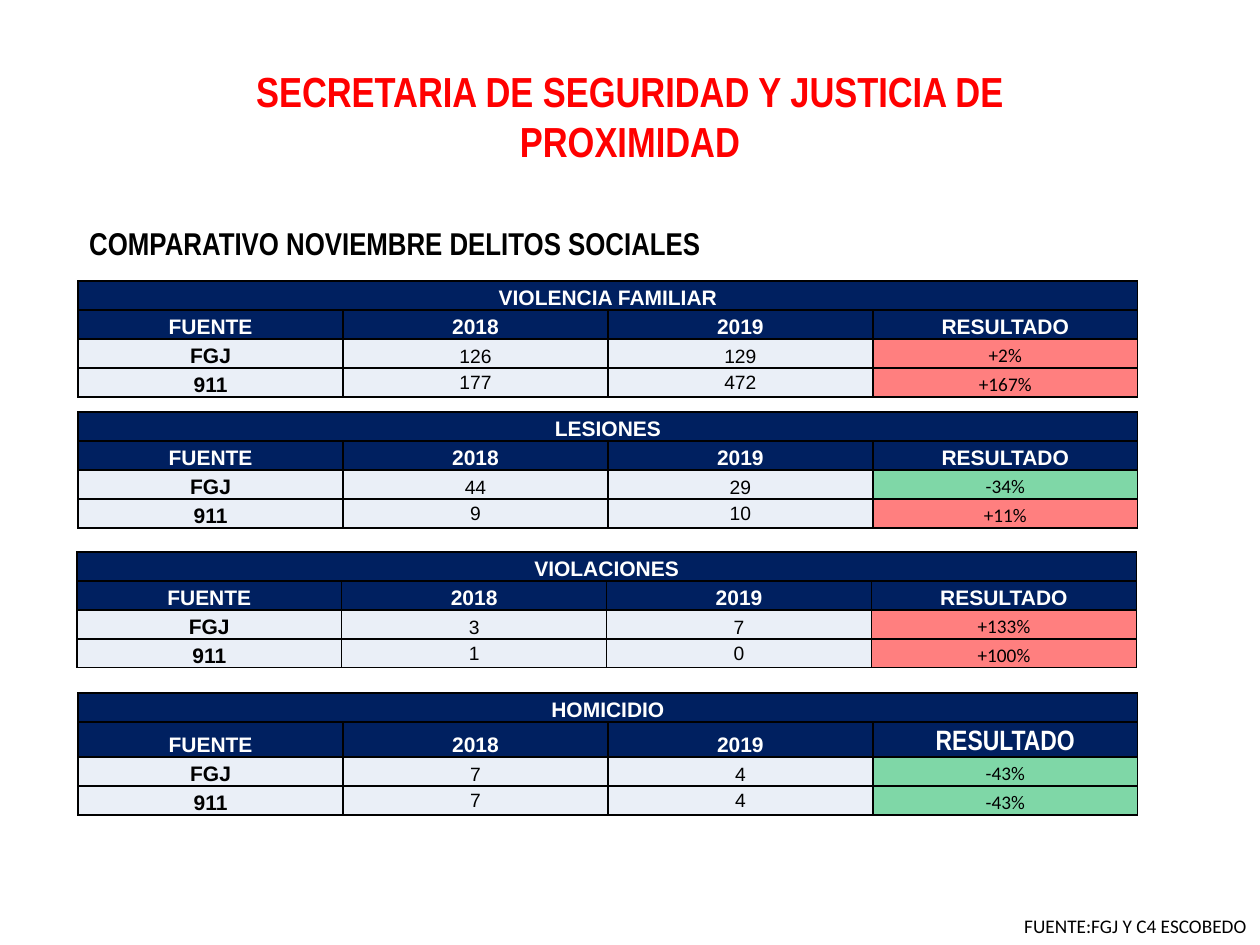
"""Build the slide comparing November social offences by source and year."""
from dataclasses import dataclass

import pptx
import pptx.dml.color
import pptx.enum.text
import pptx.oxml
import pptx.oxml.ns
import pptx.util

Inches = pptx.util.Inches
Pt = pptx.util.Pt
ALIGN = pptx.enum.text.PP_ALIGN
ANCHOR = pptx.enum.text.MSO_ANCHOR

COLORS = {
    "navy": "002060",
    "pale": "EAEFF7",
    "red": "FF0000",
    "green": "00B050",
    "white": "FFFFFF",
    "black": "000000",
}
HEADERS = ("FUENTE", "2018", "2019", "RESULTADO")
TABLE_WIDTH = 8.41
ROW_HEIGHT = 0.23


@dataclass(frozen=True)
class Style:
    size: float
    font: str
    color: str = "black"
    bold: bool = False


@dataclass(frozen=True)
class Result:
    source: str
    before: str
    after: str
    change: str
    color: str


@dataclass(frozen=True)
class Offence:
    name: str
    left: float
    top: float
    results: tuple[Result, ...]
    result_style: Style


HEAD = Style(12, "Arial", "white", True)
BIG_HEAD = Style(16, "Arial Narrow", "white", True)
SOURCE = Style(12, "Arial", bold=True)
COUNT = Style(11, "Arial")
CHANGE = Style(11, "Calibri")

OFFENCES = (
    Offence("VIOLENCIA FAMILIAR", 0.62, 2.23, (
        Result("FGJ", "126", "129", "+2%", "red"),
        Result("911", "177", "472", "+167%", "red")), HEAD),
    Offence("LESIONES", 0.62, 3.27, (
        Result("FGJ", "44", "29", "-34%", "green"),
        Result("911", "9", "10", "+11%", "red")), HEAD),
    Offence("VIOLACIONES", 0.61, 4.38, (
        Result("FGJ", "3", "7", "+133%", "red"),
        Result("911", "1", "0", "+100%", "red")), HEAD),
    Offence("HOMICIDIO", 0.62, 5.5, (
        Result("FGJ", "7", "4", "-43%", "green"),
        Result("911", "7", "4", "-43%", "green")), BIG_HEAD),
)


def rgb(name: str) -> pptx.dml.color.RGBColor:
    """Return the named colour."""
    return pptx.dml.color.RGBColor.from_string(COLORS[name])


def add_run(p, text: str, style: Style) -> None:
    """Add one styled run to a paragraph."""
    r = p.add_run()
    r.text = text
    r.font.size = Pt(style.size)
    r.font.name = style.font
    r.font.bold = style.bold
    r.font.color.rgb = rgb(style.color)


def add_text(s, box: tuple[float, ...], text: str, style: Style,
             align=ALIGN.LEFT, wrap: bool = True) -> None:
    """Add a text box holding one paragraph."""
    tf = s.shapes.add_textbox(*map(Inches, box)).text_frame
    tf.word_wrap = wrap
    tf.auto_size = pptx.enum.text.MSO_AUTO_SIZE.SHAPE_TO_FIT_TEXT
    p = tf.paragraphs[0]
    p.alignment = align
    add_run(p, text, style)


def format_cell(cell, fill: str, alpha: int = 100) -> None:
    """Give a cell its margins, black borders and fill."""
    cell.margin_left = cell.margin_right = cell.margin_top = Inches(0.01)
    cell.margin_bottom = 0
    tc_pr = cell._tc.get_or_add_tcPr()
    for side in "LRTB":
        tc_pr.append(pptx.oxml.parse_xml(
            f'<a:ln{side} {pptx.oxml.ns.nsdecls("a")} w="{Pt(1)}"><a:solidFill>'
            f'<a:srgbClr val="{COLORS["black"]}"/></a:solidFill></a:ln{side}>'))
    cell.fill.solid()
    cell.fill.fore_color.rgb = rgb(fill)
    if alpha < 100:
        color = tc_pr.find(pptx.oxml.ns.qn("a:solidFill"))[0]
        color.append(pptx.oxml.parse_xml(
            f'<a:alpha {pptx.oxml.ns.nsdecls("a")} val="{alpha * 1000}"/>'))


def write_cell(cell, text: str, style: Style, anchor=ANCHOR.BOTTOM) -> None:
    """Write centred text in a cell."""
    cell.vertical_anchor = anchor
    p = cell.text_frame.paragraphs[0]
    p.alignment = ALIGN.CENTER
    add_run(p, text, style)


def add_offence(s, offence: Offence) -> None:
    """Add the comparison table of one offence."""
    rows, cols = len(offence.results) + 2, len(HEADERS)
    table = s.shapes.add_table(
        rows, cols, Inches(offence.left), Inches(offence.top),
        Inches(TABLE_WIDTH), Inches(rows * ROW_HEIGHT)).table
    for row in table.rows:
        row.height = Inches(ROW_HEIGHT)
    for row in range(2):
        for col in range(cols):
            format_cell(table.cell(row, col), "navy")
    table.cell(0, 0).merge(table.cell(0, cols - 1))
    write_cell(table.cell(0, 0), offence.name, HEAD)
    for col, header in enumerate(HEADERS):
        style = offence.result_style if col == cols - 1 else HEAD
        write_cell(table.cell(1, col), header, style)
    for row, result in enumerate(offence.results, 2):
        count_anchor = ANCHOR.MIDDLE if row == rows - 1 else ANCHOR.BOTTOM
        source, before, after, change = (table.cell(row, c) for c in range(cols))
        for cell in (source, before, after):
            format_cell(cell, "pale")
        format_cell(change, result.color, 50)
        write_cell(source, result.source, SOURCE)
        write_cell(before, result.before, COUNT, count_anchor)
        write_cell(after, result.after, COUNT, count_anchor)
        write_cell(change, result.change, CHANGE)


def main() -> None:
    """Build and save the slide."""
    prs = pptx.Presentation()
    prs.slide_width, prs.slide_height = Inches(10), Inches(7.5)
    s = prs.slides.add_slide(prs.slide_layouts[6])
    add_text(s, (1.9, 0.47, 6.2, 0.91),
             "SECRETARIA DE SEGURIDAD Y JUSTICIA DE PROXIMIDAD",
             Style(24, "Arial Narrow", "red", True), ALIGN.CENTER)
    add_text(s, (0.61, 1.73, 7.38, 0.4), "COMPARATIVO NOVIEMBRE DELITOS SOCIALES",
             Style(18, "Arial Narrow", bold=True))
    for offence in OFFENCES:
        add_offence(s, offence)
    add_text(s, (8.03, 7.21, 1.98, 0.29), "FUENTE:FGJ Y C4 ESCOBEDO",
             Style(11, "Calibri"), wrap=False)
    prs.save("out.pptx")


if __name__ == "__main__":
    main()
